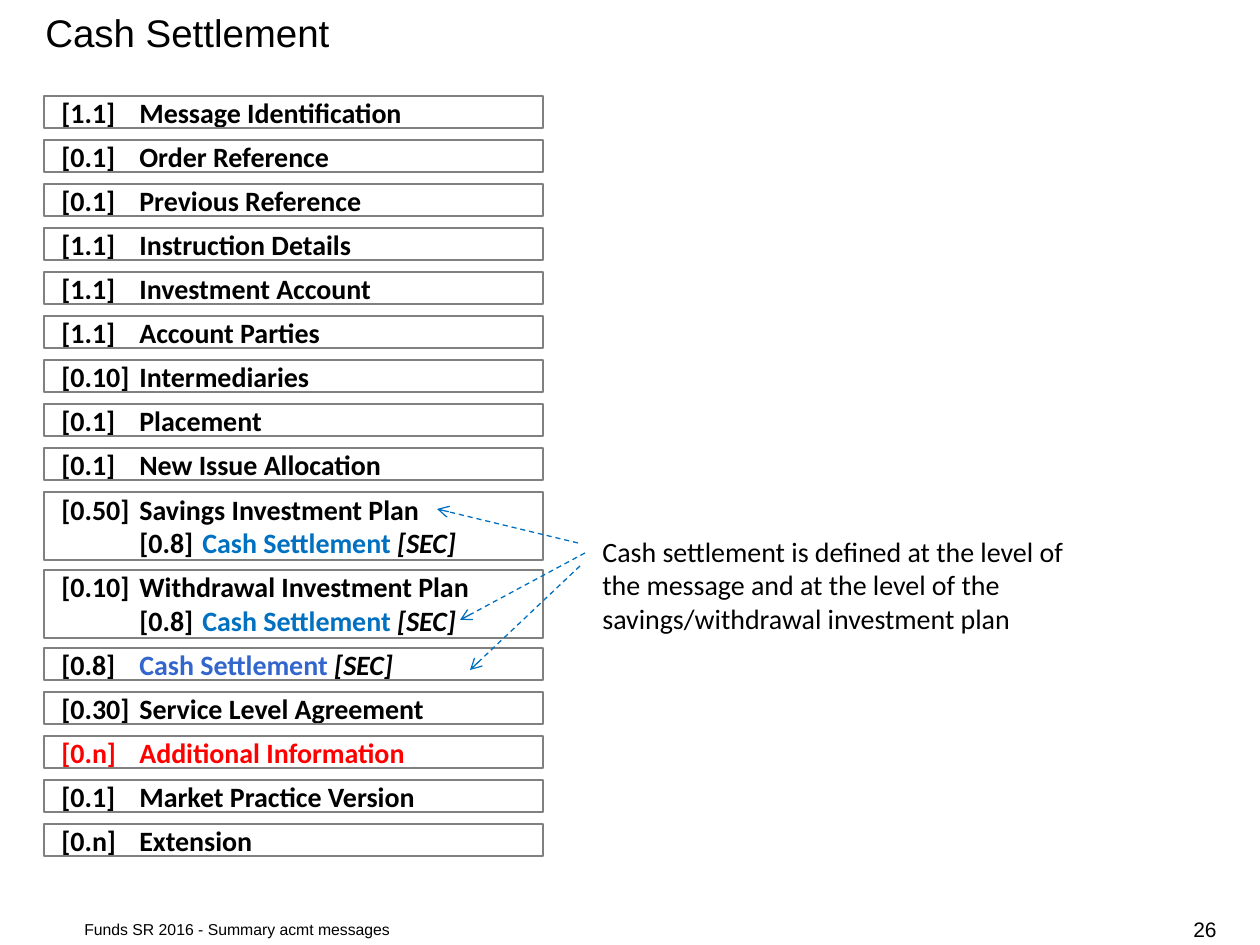
from lxml.etree import SubElement
from pptx import Presentation
from pptx.dml.color import RGBColor
from pptx.enum.dml import MSO_LINE_DASH_STYLE as Dash
from pptx.enum.shapes import MSO_CONNECTOR, MSO_SHAPE
from pptx.enum.text import MSO_ANCHOR as Anchor, PP_ALIGN as Align
from pptx.oxml.ns import qn
from pptx.util import Pt

EMU_PER_INCH, PX_PER_INCH = 914400, 126
COLORS = {"black": "000000", "blue": "0070C0", "indigo": "3366CC",
          "red": "FF0000", "frame": "808080"}
TAB_STOPS = (78, 141)
FRAME_LEFT, FRAME_TOP, FRAME_WIDTH = 44, 96, 499
FRAME_HEIGHTS = {1: 32, 2: 68}   # by number of text lines
FRAME_PITCHES = {1: 44, 2: 78}


def element(text, color="black"):
    return [(text, color, False)]


def settlement(prefix, color):
    return [(prefix, "black", False), ("Cash Settlement ", color, False),
            ("[SEC]", "black", True)]


NESTED_SETTLEMENT = settlement("\t[0.8]\t", "blue")
# Each block gets one frame and holds one or two lines of runs.
BLOCKS = [
    [element("[1.1]\tMessage Identification")],
    [element("[0.1]\tOrder Reference")],
    [element("[0.1]\tPrevious Reference")],
    [element("[1.1]\tInstruction Details")],
    [element("[1.1]\tInvestment Account")],
    [element("[1.1]\tAccount Parties")],
    [element("[0.10]\tIntermediaries")],
    [element("[0.1]\tPlacement")],
    [element("[0.1]\tNew Issue Allocation")],
    [element("[0.50]\tSavings Investment Plan"), NESTED_SETTLEMENT],
    [element("[0.10]\tWithdrawal Investment Plan"), NESTED_SETTLEMENT],
    [settlement("[0.8]\t", "indigo")],
    [element("[0.30]\tService Level Agreement")],
    [element("[0.n]\tAdditional Information", "red")],
    [element("[0.1]\tMarket Practice Version")],
    [element("[0.n]\tExtension")],
]
ARROWS = [((580, 566), (470, 670)), ((585, 553), (460, 620)),
          ((578, 543), (437, 509))]


def px(value):
    return round(value * EMU_PER_INCH / PX_PER_INCH)


def rgb(name):
    return RGBColor.from_string(COLORS[name])


def style_font(font, name, size, color="black"):
    font.name, font.size, font.color.rgb = name, Pt(size), rgb(color)


def add_frame_for_text(slide, box, anchor=Anchor.TOP):
    frame = slide.shapes.add_textbox(*map(px, box)).text_frame
    frame.word_wrap = True
    frame.vertical_anchor = anchor
    return frame


def add_label(slide, box, text, font_name, size, anchor=Anchor.TOP, align=Align.LEFT):
    frame = add_frame_for_text(slide, box, anchor)
    frame.text = text
    paragraph = frame.paragraphs[0]
    paragraph.alignment = align
    style_font(paragraph.runs[0].font, font_name, size)


def add_tab_stops(paragraph):
    tabs = SubElement(paragraph._p.get_or_add_pPr(), qn("a:tabLst"))
    for stop in TAB_STOPS:
        SubElement(tabs, qn("a:tab"), pos=str(px(stop)), algn="l")


def add_message_text(slide):
    frame = add_frame_for_text(slide, (49, 89, 462, 782))
    paragraph = frame.paragraphs[0]
    for block_index, block in enumerate(BLOCKS):
        for line_index, line in enumerate(block):
            if block_index or line_index:
                paragraph = frame.add_paragraph()
            add_tab_stops(paragraph)
            is_last_line = line_index == len(block) - 1
            paragraph.space_after = Pt(6 if is_last_line else 0)
            for text, color, italic in line:
                run = paragraph.add_run()
                run.text = text
                style_font(run.font, "Calibri", 16, color)
                run.font.bold, run.font.italic = True, italic


def add_block_frames(slide):
    top = FRAME_TOP
    for block in BLOCKS:
        lines = len(block)
        box = (FRAME_LEFT, top, FRAME_WIDTH, FRAME_HEIGHTS[lines])
        outline = slide.shapes.add_shape(MSO_SHAPE.RECTANGLE, *map(px, box))
        outline.shadow.inherit = False
        outline.fill.background()
        outline.line.color.rgb = rgb("frame")
        outline.line.width = Pt(0.75)
        top += FRAME_PITCHES[lines]


def add_dashed_arrow(slide, start, end):
    arrow = slide.shapes.add_connector(MSO_CONNECTOR.STRAIGHT, *map(px, start + end))
    arrow.line.color.rgb = rgb("blue")
    arrow.line.width = Pt(0.75)
    arrow.line.dash_style = Dash.DASH
    SubElement(arrow.line._get_or_add_ln(), qn("a:tailEnd"), type="arrow")
    SubElement(arrow._element.spPr, qn("a:effectLst"))


def main():
    presentation = Presentation()
    presentation.slide_width, presentation.slide_height = px(1260), px(945)
    slide = presentation.slides.add_slide(presentation.slide_layouts[6])

    add_label(slide, (33, 3, 1050, 60), "Cash Settlement", "Arial", 22)
    add_label(slide, (72, 914, 782, 31), "Funds SR 2016 - Summary acmt messages",
              "Arial", 9, Anchor.MIDDLE)
    add_label(slide, (1124, 914, 105, 31), "26", "Arial", 12, Anchor.MIDDLE, Align.RIGHT)
    add_message_text(slide)
    add_label(slide, (590, 528, 520, 115),
              "Cash settlement is defined at the level of the message and at the "
              "level of the savings/withdrawal investment plan", "Calibri", 16)
    add_block_frames(slide)
    for start, end in ARROWS:
        add_dashed_arrow(slide, start, end)

    presentation.save("out.pptx")


if __name__ == "__main__":
    main()
